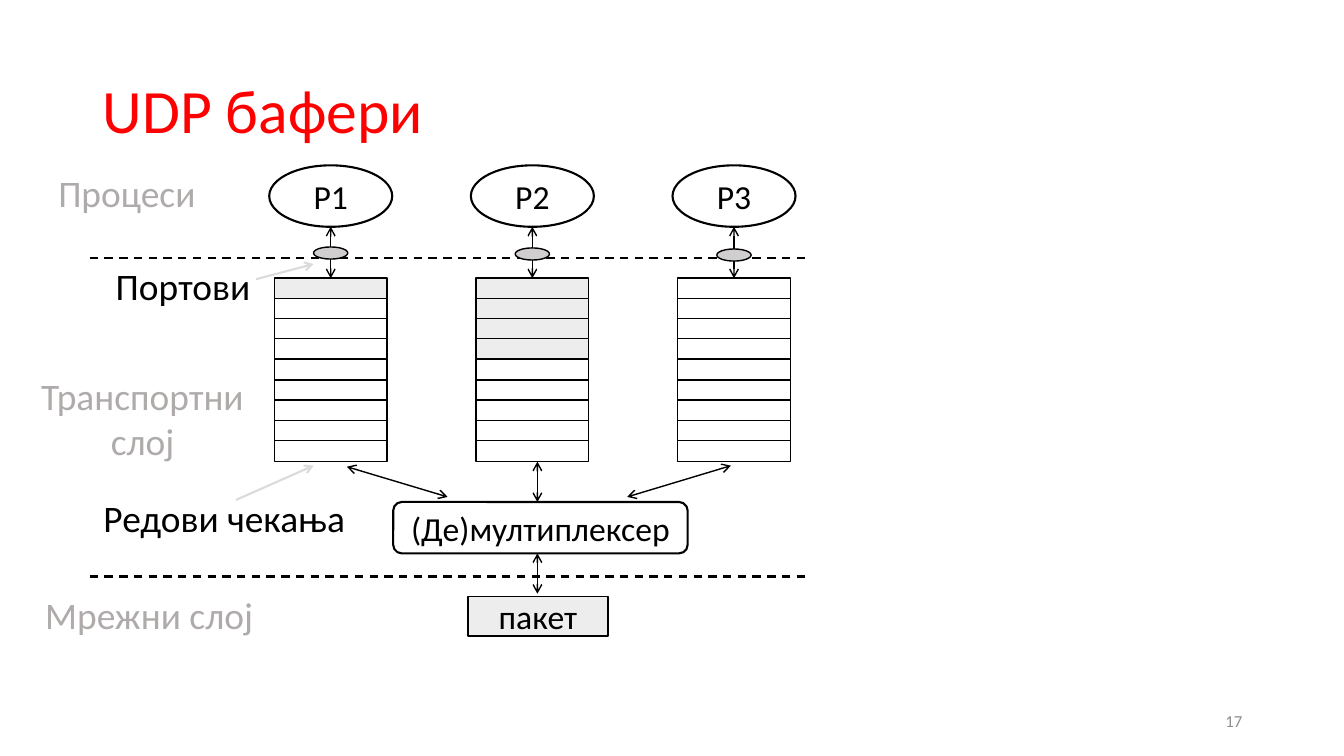
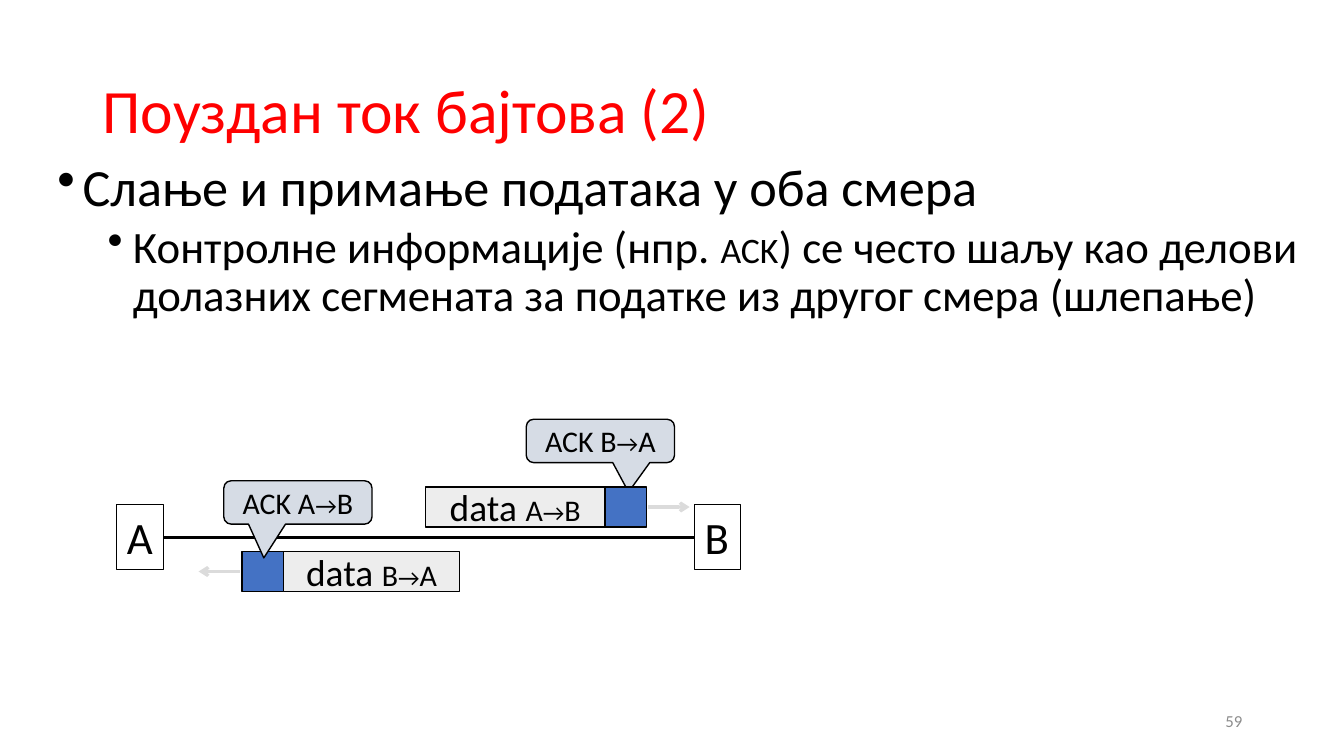
from dataclasses import dataclass
from typing import Optional

import lxml.etree
import pptx
import pptx.dml.color
import pptx.enum.dml
import pptx.enum.shapes
import pptx.enum.text
import pptx.oxml.ns
import pptx.util

PX = 9144
FONT = "Calibri"
BLACK = "000000"
WHITE = "FFFFFF"
TITLE_RED = "FF0000"
NUMBER_GRAY = "8C8C8C"
LAYER_GRAY = "AFABAB"
POINTER_GRAY = "DBDBDB"
BUFFER_GRAY = "EDEDED"
PORT_GRAY = "D0CECE"
ACK_BLUE = "4472C4"
CALLOUT_BLUE = "D6DCE5"

SHAPE = pptx.enum.shapes.MSO_SHAPE
ALIGN = pptx.enum.text.PP_ALIGN
ANCHOR = pptx.enum.text.MSO_ANCHOR


@dataclass(frozen=True)
class Run:
    text: str
    size: Optional[float] = None
    small_caps: bool = False


@dataclass(frozen=True)
class Paragraph:
    runs: tuple[Run, ...]
    size: float
    color: str = BLACK
    align: ALIGN = ALIGN.CENTER
    level: int = 0
    line_spacing: Optional[float] = None
    space_before: int = 0
    bullet_margin: int = 0


@dataclass(frozen=True)
class TextStyle:
    anchor: ANCHOR = ANCHOR.MIDDLE
    wrap: bool = True
    grow: bool = False
    insets: tuple[int, int, int, int] = (10, 5, 10, 5)


@dataclass(frozen=True)
class Box:
    left: int
    top: int
    width: int
    height: int
    kind: SHAPE = SHAPE.RECTANGLE
    fill: Optional[str] = None
    line_width: float = 1
    paragraph: Optional[Paragraph] = None
    style: TextStyle = TextStyle()
    adjustments: tuple[float, ...] = ()


@dataclass(frozen=True)
class Wire:
    start: tuple[int, int]
    end: tuple[int, int]
    color: str = BLACK
    width: float = 1
    dashed: bool = False
    arrows: tuple[str, ...] = ()


@dataclass(frozen=True)
class Process:
    name: str
    center: int
    port_top: int
    used_rows: int


@dataclass(frozen=True)
class Label:
    lines: tuple[str, ...]
    left: int
    top: int
    width: int
    height: int = 55
    color: str = LAYER_GRAY
    align: ALIGN = ALIGN.CENTER


BOTH_ENDS = ("headEnd", "tailEnd")
END_ONLY = ("tailEnd",)
LABEL_STYLE = TextStyle(anchor=ANCHOR.TOP, wrap=False, grow=True)
CALLOUT_STYLE = TextStyle(anchor=ANCHOR.BOTTOM, insets=(0, 5, 0, 0))

PROCESSES = (
    Process("P1", 328, 245, 1),
    Process("P2", 528, 246, 4),
    Process("P3", 728, 247, 0),
)
QUEUE_TOP, QUEUE_WIDTH, QUEUE_HEIGHT, QUEUE_ROWS = 276, 112, 182, 9

LABELS = (
    Label(("Процеси",), 48, 164, 157, align=ALIGN.LEFT),
    Label(("Мрежни слој",), 34, 582, 228),
    Label(("Редови чекања",), 92, 486, 261, color=BLACK),
    Label(("Портови",), 104, 256, 155, color=BLACK),
    Label(("Транспортни", "\n", "слој"), 30, 365, 223, 100),
)


def rgb(color: str) -> pptx.dml.color.RGBColor:
    return pptx.dml.color.RGBColor.from_string(color)


def px(*lengths: int) -> list[pptx.util.Emu]:
    return [pptx.util.Emu(length * PX) for length in lengths]


def add_xml(parent, tag: str, **attributes: str) -> None:
    lxml.etree.SubElement(parent, pptx.oxml.ns.qn(tag), **attributes)


def plain(text: str, size: float, color: str = BLACK, align: ALIGN = ALIGN.CENTER) -> Paragraph:
    return Paragraph((Run(text),), size, color, align)


def direction(prefix: str, source: str, target: str, small_prefix: bool) -> Paragraph:
    return Paragraph(
        (Run(prefix, small_caps=small_prefix), Run(source, small_caps=True),
         Run("→", 21.3, True), Run(target, small_caps=True)),
        26.7,
    )


def write_paragraph(paragraph, content: Paragraph) -> None:
    paragraph.alignment = content.align
    paragraph.level = content.level
    if content.line_spacing:
        paragraph.line_spacing = content.line_spacing
    if content.space_before:
        paragraph.space_before = pptx.util.Pt(content.space_before)
    if content.bullet_margin:
        properties = paragraph._p.get_or_add_pPr()
        properties.set("marL", str(content.bullet_margin * PX))
        properties.set("indent", str(-25 * PX))
        add_xml(properties, "a:buChar", char="•")
    paragraph.font.name = FONT
    paragraph.font.size = pptx.util.Pt(content.size)
    paragraph.font.color.rgb = rgb(content.color)
    for part in content.runs:
        if part.text == "\n":
            paragraph.add_line_break()
            continue
        run = paragraph.add_run()
        run.text = part.text
        if part.size:
            run.font.size = pptx.util.Pt(part.size)
        if part.small_caps:
            run._r.get_or_add_rPr().set("cap", "small")


def write_text(shape, contents: tuple[Paragraph, ...], style: TextStyle) -> None:
    frame = shape.text_frame
    frame.word_wrap = style.wrap
    frame.vertical_anchor = style.anchor
    if style.grow:
        frame.auto_size = pptx.enum.text.MSO_AUTO_SIZE.SHAPE_TO_FIT_TEXT
    (frame.margin_left, frame.margin_top,
     frame.margin_right, frame.margin_bottom) = px(*style.insets)
    for index, content in enumerate(contents):
        paragraph = frame.add_paragraph() if index else frame.paragraphs[0]
        write_paragraph(paragraph, content)


def draw_text(slide, bounds: tuple[int, int, int, int],
              contents: tuple[Paragraph, ...], style: TextStyle = TextStyle()) -> None:
    write_text(slide.shapes.add_textbox(*px(*bounds)), contents, style)


def draw_box(slide, box: Box):
    shape = slide.shapes.add_shape(box.kind, *px(box.left, box.top, box.width, box.height))
    shape.shadow.inherit = False
    for index, value in enumerate(box.adjustments):
        shape.adjustments[index] = value
    if box.fill:
        shape.fill.solid()
        shape.fill.fore_color.rgb = rgb(box.fill)
    else:
        shape.fill.background()
    shape.line.color.rgb = rgb(BLACK)
    shape.line.width = pptx.util.Pt(box.line_width)
    if box.paragraph:
        write_text(shape, (box.paragraph,), box.style)
    return shape


def draw_wire(slide, wire: Wire):
    connector = slide.shapes.add_connector(
        pptx.enum.shapes.MSO_CONNECTOR.STRAIGHT, *px(*wire.start, *wire.end))
    connector.line.color.rgb = rgb(wire.color)
    connector.line.width = pptx.util.Pt(wire.width)
    if wire.dashed:
        connector.line.dash_style = pptx.enum.dml.MSO_LINE.DASH
    properties = connector._element.spPr
    outline = properties.find(pptx.oxml.ns.qn("a:ln"))
    for arrow in wire.arrows:
        add_xml(outline, f"a:{arrow}", type="arrow")
    add_xml(properties, "a:effectLst")
    return connector


def add_slide(presentation, title: str, number: int):
    slide = presentation.slides.add_slide(presentation.slide_layouts[6])
    heading = Paragraph((Run(title),), 44, TITLE_RED, ALIGN.LEFT, line_spacing=0.9)
    draw_text(slide, (92, 40, 1150, 145), (heading,))
    draw_text(slide, (942, 695, 300, 40), (plain(str(number), 12, NUMBER_GRAY, ALIGN.RIGHT),))
    return slide


def draw_process(slide, process: Process) -> None:
    draw_box(slide, Box(process.center - 61, 164, 122, 61, SHAPE.OVAL, line_width=1.5,
                        paragraph=plain(process.name, 24)))
    edges = [QUEUE_TOP + row * QUEUE_HEIGHT // QUEUE_ROWS for row in range(QUEUE_ROWS + 1)]
    rows = [
        draw_box(slide, Box(process.center - QUEUE_WIDTH // 2, top, QUEUE_WIDTH, bottom - top,
                            fill=BUFFER_GRAY if row < process.used_rows else None))
        for row, (top, bottom) in enumerate(zip(edges, edges[1:]))
    ]
    link = draw_wire(slide, Wire((process.center, 225), (process.center, QUEUE_TOP),
                                 arrows=BOTH_ENDS))
    link.end_connect(rows[0], 0)


def build_buffers(presentation) -> None:
    slide = add_slide(presentation, "UDP бафери", 17)
    for process in PROCESSES:
        draw_process(slide, process)
    draw_box(slide, Box(390, 498, 292, 51, SHAPE.ROUNDED_RECTANGLE, WHITE, 1.5,
                        plain("(Де)мултиплексер", 24)))
    for start, end in (((444, 493), (344, 463)), ((533, 498), (533, 458)),
                       ((622, 493), (725, 462)), ((533, 589), (533, 549))):
        draw_wire(slide, Wire(start, end, arrows=BOTH_ENDS))
    for boundary in (256, 572):
        draw_wire(slide, Wire((89, boundary), (800, boundary), width=1.5, dashed=True))
    draw_box(slide, Box(464, 592, 139, 39, fill=BUFFER_GRAY, paragraph=plain("пакет", 24)))
    for process in PROCESSES:
        draw_box(slide, Box(process.center - 17, process.port_top, 34, 12, SHAPE.OVAL, PORT_GRAY))
    for label in LABELS:
        runs = tuple(Run(line) for line in label.lines)
        draw_text(slide, (label.left, label.top, label.width, label.height),
                  (Paragraph(runs, 26.7, label.color, label.align),), LABEL_STYLE)
    for start, end in (((234, 496), (311, 462)), ((254, 277), (311, 262))):
        draw_wire(slide, Wire(start, end, POINTER_GRAY, 1.5, arrows=END_ONLY))


def build_byte_stream(presentation) -> None:
    slide = add_slide(presentation, "Поуздан ток бајтова (2)", 59)
    draw_text(slide, (47, 155, 1251, 522), (
        Paragraph((Run("Слање и примање података у оба смера"),), 37.3, align=ALIGN.LEFT,
                  line_spacing=0.9, space_before=10, bullet_margin=25),
        Paragraph((Run("Контролне информације (нпр. "), Run("ack", small_caps=True),
                   Run(") се често шаљу као делови долазних сегмената за податке "
                       "из другог смера (шлепање)")),
                  32, align=ALIGN.LEFT, level=1,
                  line_spacing=0.9, space_before=5, bullet_margin=75),
    ), TextStyle(anchor=ANCHOR.TOP))
    channel = draw_wire(slide, Wire((162, 533), (689, 533), width=2))
    host_a, host_b = (
        draw_box(slide, Box(left, 501, width, 64, line_width=0.75,
                            paragraph=plain(name, 32, align=ALIGN.LEFT), style=LABEL_STYLE))
        for name, left, width in (("A", 116, 46), ("B", 689, 45))
    )
    channel.begin_connect(host_a, 3)
    channel.end_connect(host_b, 1)
    ack_from_a, ack_from_b = (
        Box(left, top, 147, 43, SHAPE.ROUNDED_RECTANGULAR_CALLOUT, CALLOUT_BLUE,
            paragraph=direction("ack ", source, target, True),
            style=CALLOUT_STYLE, adjustments=adjustments)
        for source, target, left, top, adjustments in (
            ("a", "b", 222, 477, (-0.23, 1.28, 0.17)),
            ("b", "a", 522, 416, (0.19, 1.18, 0.17)),
        )
    )
    draw_box(slide, ack_from_b)
    for source, target, top, ack_left, data_left, data_width, start, end in (
        ("b", "a", 547, 240, 281, 175, 238, 197),
        ("a", "b", 483, 600, 422, 178, 643, 684),
    ):
        draw_wire(slide, Wire((start, top + 20), (end, top + 20), POINTER_GRAY, 2.25,
                              arrows=END_ONLY))
        draw_box(slide, Box(ack_left, top, 41, 40, fill=ACK_BLUE))
        draw_box(slide, Box(data_left, top, data_width, 40, fill=BUFFER_GRAY,
                            paragraph=direction("data ", source, target, False)))
    draw_box(slide, ack_from_a)


def main() -> None:
    presentation = pptx.Presentation()
    presentation.slide_width, presentation.slide_height = px(1333, 750)
    build_buffers(presentation)
    build_byte_stream(presentation)
    presentation.save("out.pptx")


if __name__ == "__main__":
    main()
